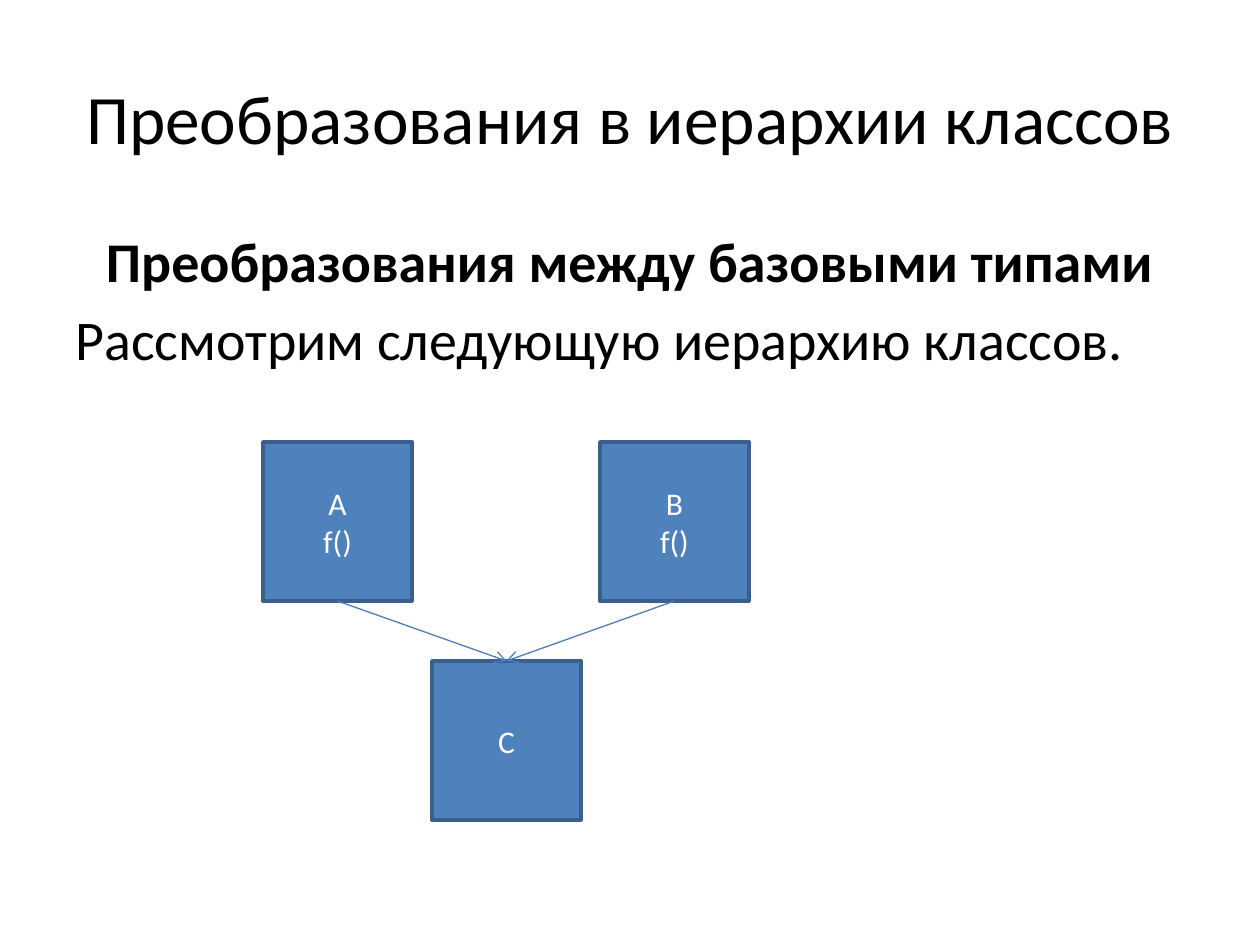
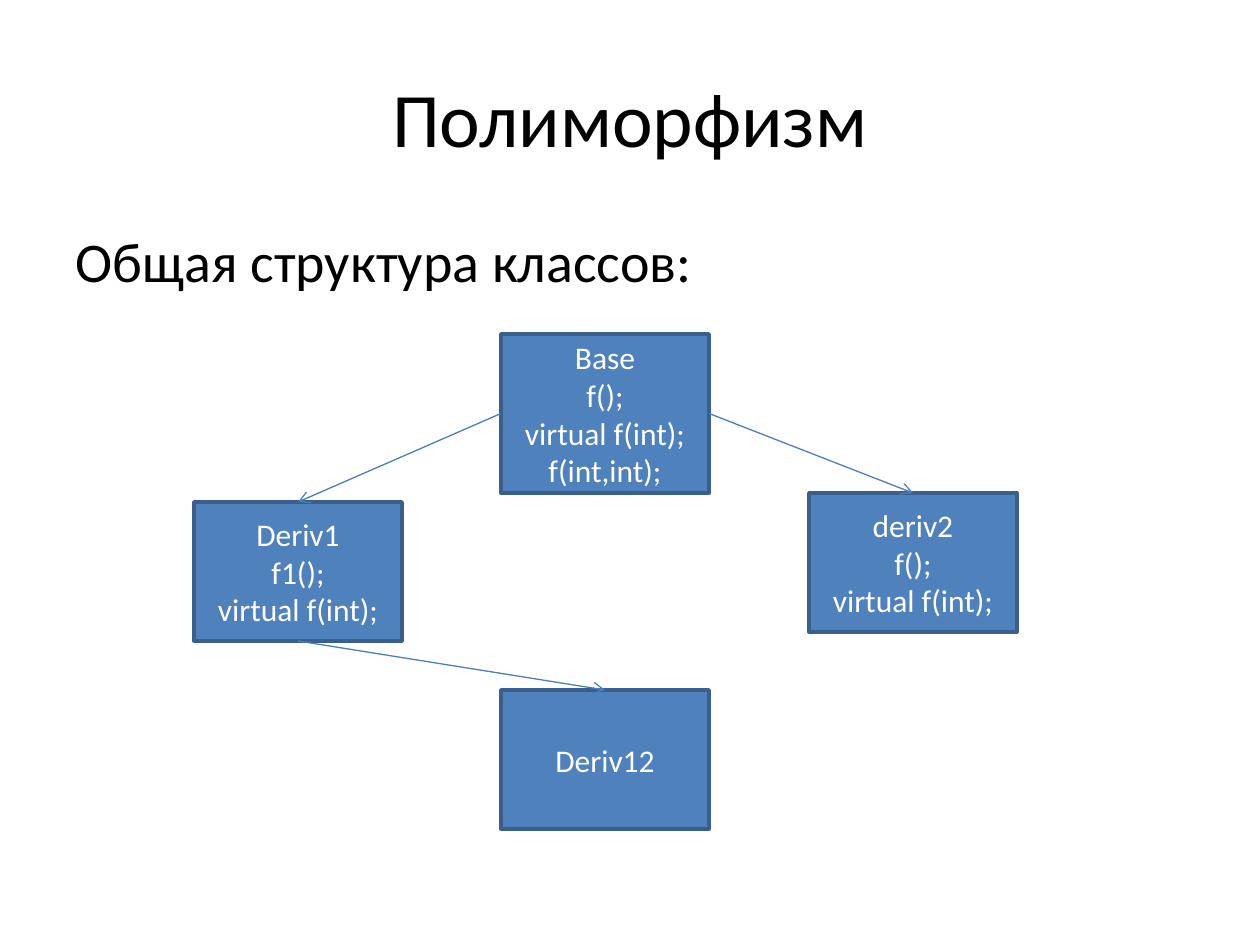
from pptx import Presentation
from pptx import util as u
from pptx.dml.color import RGBColor
from pptx.enum import shapes, text
from pptx.oxml.ns import qn
from lxml import etree

# Shared look
FONT = "Calibri"
BLACK, WHITE = "000000", "FFFFFF"
BOX_FILL, BOX_EDGE, ARROW = "4F81BD", "3A5F8C", "4B7EBC"
TITLE_FRAME = (63, 38, 1134, 158)
BODY_FRAME = (63, 220, 1134, 624)
CENTER = text.PP_ALIGN.CENTER

# Connection sites of a rectangle
TOP, LEFT, BOTTOM, RIGHT = range(4)


def px(length):
    return u.Emu(round(length * 914400 / 126))


def color(value):
    return RGBColor.from_string(value)


def place(shape, frame):
    shape.left, shape.top, shape.width, shape.height = map(px, frame)


def style(para, size, ink, bold=False):
    for span in para.runs:
        span.font.name = FONT
        span.font.size = u.Pt(size)
        span.font.bold = bold
        span.font.color.rgb = color(ink)


def add_page(deck, title, lines, title_size=44):
    """Add a page with a title and unbulleted (line, is_heading) paragraphs."""
    page = deck.slides.add_slide(deck.slide_layouts[1])
    heading, body = page.placeholders
    place(heading, TITLE_FRAME)
    heading.text_frame.text = title
    heading.text_frame.vertical_anchor = text.MSO_ANCHOR.MIDDLE
    heading.text_frame.paragraphs[0].alignment = CENTER
    style(heading.text_frame.paragraphs[0], title_size, BLACK)

    place(body, BODY_FRAME)
    body.text_frame.text = "\n".join(line for line, _ in lines)
    for para, (_, is_heading) in zip(body.text_frame.paragraphs, lines):
        para.alignment = CENTER if is_heading else text.PP_ALIGN.LEFT
        style(para, 32, BLACK, is_heading)
        etree.SubElement(para._p.get_or_add_pPr(), qn("a:buNone"))
    return page


def add_class(page, frame, *members):
    """Add a class box with one centred line per member."""
    box = page.shapes.add_shape(shapes.MSO_SHAPE.RECTANGLE, *map(px, frame))
    box.shadow.inherit = False
    box.fill.solid()
    box.fill.fore_color.rgb = color(BOX_FILL)
    box.line.color.rgb = color(BOX_EDGE)
    box.line.width = u.Pt(2)
    box.text_frame.word_wrap = True
    box.text_frame.vertical_anchor = text.MSO_ANCHOR.MIDDLE
    box.text_frame.text = "\n".join(members)
    for para in box.text_frame.paragraphs:
        para.alignment = CENTER
        style(para, 18, WHITE)
    return box


def add_arrow(page, parent, parent_site, child):
    """Join a site of the parent class to the top of the child class."""
    line = page.shapes.add_connector(shapes.MSO_CONNECTOR.STRAIGHT, 0, 0, 0, 0)
    line.begin_connect(parent, parent_site)
    line.end_connect(child, TOP)
    line.line.color.rgb = color(ARROW)
    line.line.width = u.Pt(0.75)
    etree.SubElement(line.line._get_or_add_ln(), qn("a:tailEnd"), type="arrow")
    etree.SubElement(line._element.spPr, qn("a:effectLst"))


def add_conversions(deck):
    page = add_page(deck, "Преобразования в иерархии классов", [
        ("Преобразования между базовыми типами", True),
        ("Рассмотрим следующую иерархию классов.", False),
    ], title_size=39.6)
    size = (149, 159)
    class_a = add_class(page, (263, 442, *size), "A", "f()")
    class_c = add_class(page, (432, 661, *size), "C")
    class_b = add_class(page, (600, 442, *size), "B", "f()")
    for parent in (class_a, class_b):
        add_arrow(page, parent, BOTTOM, class_c)


def add_polymorphism(deck):
    page = add_page(deck, "Полиморфизм", [("Общая структура классов:", False)])
    size = (208, 139)
    base = add_class(page, (501, 334, 208, 159),
                     "Base", "f();", "virtual f(int);", "f(int,int);")
    deriv12 = add_class(page, (501, 690, *size), "Deriv12")
    deriv1 = add_class(page, (194, 502, *size), "Deriv1", "f1();", "virtual f(int);")
    deriv2 = add_class(page, (809, 493, *size), "deriv2", "f();", "virtual f(int);")
    add_arrow(page, base, LEFT, deriv1)
    add_arrow(page, base, RIGHT, deriv2)
    add_arrow(page, deriv1, BOTTOM, deriv12)


def main():
    deck = Presentation()
    deck.slide_width, deck.slide_height = px(1260), px(945)
    add_conversions(deck)
    add_polymorphism(deck)
    deck.save("out.pptx")


if __name__ == "__main__":
    main()
